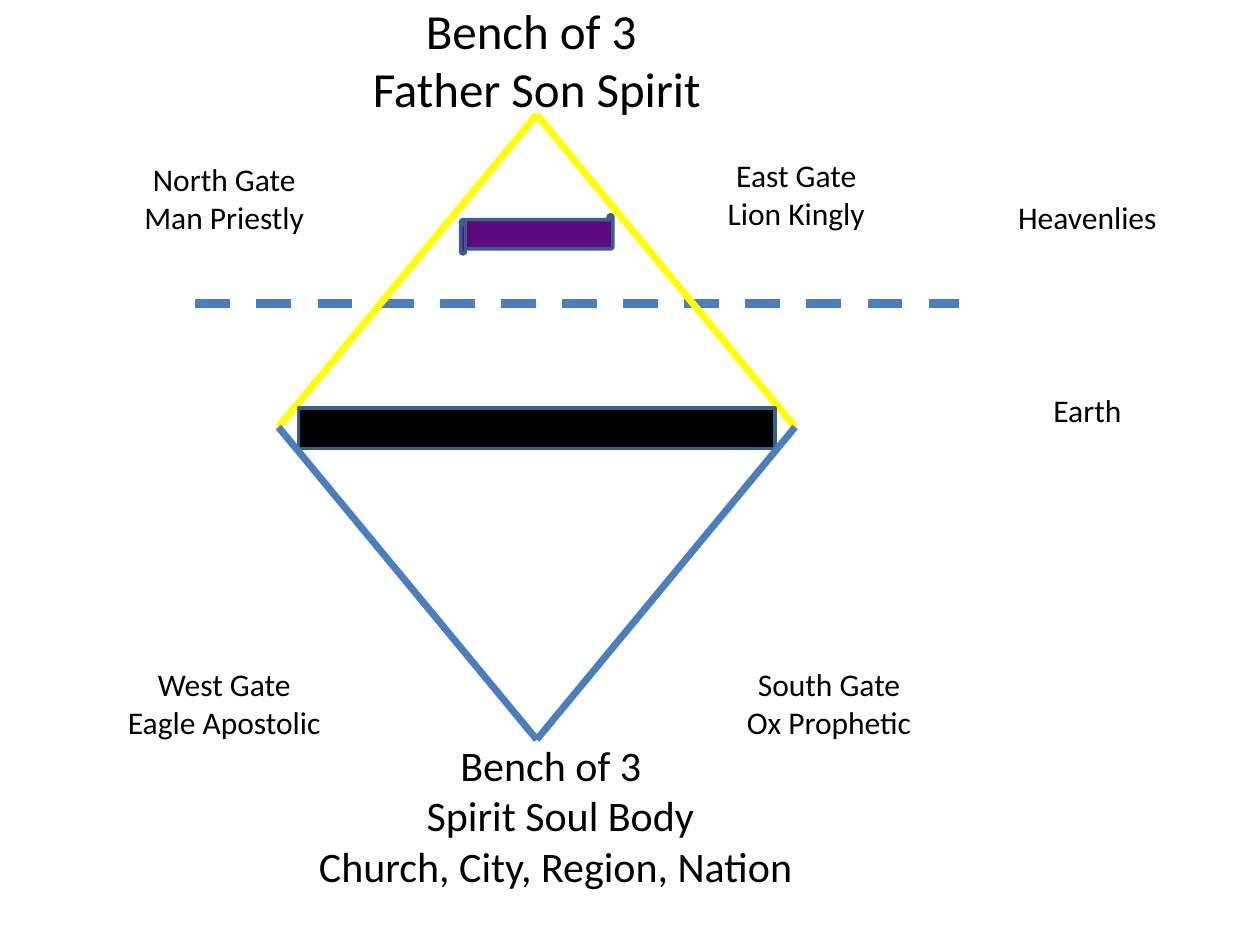
from lxml import etree
from pptx import Presentation
from pptx.dml.color import RGBColor
from pptx.enum.dml import MSO_LINE
from pptx.enum.shapes import MSO_CONNECTOR, MSO_SHAPE
from pptx.enum.text import MSO_ANCHOR, MSO_AUTO_SIZE, PP_ALIGN
from pptx.oxml.ns import qn
from pptx.util import Inches, Pt

STRAIGHT, DASH = MSO_CONNECTOR.STRAIGHT, MSO_LINE.DASH
RECT, SCROLL = MSO_SHAPE.RECTANGLE, MSO_SHAPE.HORIZONTAL_SCROLL
CENTER, TOP, NO_FIT = PP_ALIGN.CENTER, MSO_ANCHOR.TOP, MSO_AUTO_SIZE.NONE

THEME = {
    "font": "Calibri", "title": 28, "foot": 24, "label": 18,
    "text": "000000", "heaven": "FFFF00", "earth": "4B7EBC",
    "scroll": "5C097D", "bar": "000000", "outline": "3A5F8C",
}

TITLE = ["Bench of 3 ", "Father Son Spirit"]
FOOT = ["Bench of 3 ", " Spirit Soul Body", "Church, City, Region, Nation"]
LABELS = [
    ("Heavenlies", 7.76, 1.57),
    ("Earth", 7.76, 3.1),
    ("North Gate\vMan Priestly", 0.91, 1.27),
    ("East Gate\vLion Kingly", 5.45, 1.24),
    ("West Gate\vEagle Apostolic", 0.91, 5.28),
    ("South Gate\vOx Prophetic", 5.71, 5.28),
]

W, H = 10, 7.5
TITLE_W, TITLE_H = 3, 0.92
LABEL_W, LABEL_H = 1.74, 0.61
FOOT_W, FOOT_H = 2.6, 1.34
CX, CY = 4.26, 3.39
HALF_W, HALF_H = 2.05, 2.48
APEX, BASE = (CX, CY - HALF_H), (CX, CY + HALF_H)
SIDES = [(CX - HALF_W, CY), (CX + HALF_W, CY)]
HORIZON = [(1.55, 2.41), (7.61, 2.41)]


def rgb(key):
    return RGBColor.from_string(THEME[key])


def write(sp, paragraphs, size="label", color="text", wrap=False):
    tf = sp.text_frame
    tf.auto_size, tf.word_wrap, tf.vertical_anchor = NO_FIT, wrap, TOP
    tf.margin_left = tf.margin_right = tf.margin_top = tf.margin_bottom = 0
    tf.text = "\n".join(paragraphs)
    for p in tf.paragraphs:
        p.alignment, p.line_spacing = CENTER, 1.0
        p.space_before = p.space_after = Pt(0)
        for r in p.runs:
            r.font.name, r.font.size = THEME["font"], Pt(THEME[size])
            r.font.color.rgb = rgb(color)


def add_text(s, paragraphs, x, y, w=LABEL_W, h=LABEL_H, **fmt):
    sp = s.shapes.add_textbox(Inches(x), Inches(y), Inches(w), Inches(h))
    write(sp, paragraphs, **fmt)


def add_line(s, start, end, color, width=4, dash=None):
    ln = s.shapes.add_connector(STRAIGHT, *map(Inches, start + end))
    ln.line.color.rgb, ln.line.width = rgb(color), Pt(width)
    if dash:
        ln.line.dash_style = dash
    etree.SubElement(ln._element.spPr, qn("a:effectLst"))


def add_bar(s, kind, cy, w, h, fill):
    sp = s.shapes.add_shape(kind, Inches(CX - w / 2), Inches(cy - h / 2),
                            Inches(w), Inches(h))
    sp.shadow.inherit = False
    sp.fill.solid()
    sp.fill.fore_color.rgb = rgb(fill)
    sp.line.color.rgb, sp.line.width = rgb("outline"), Pt(2)


def main():
    prs = Presentation()
    prs.slide_width, prs.slide_height = Inches(W), Inches(H)
    s = prs.slides.add_slide(prs.slide_layouts[5])

    title = s.shapes.title
    title.left, title.top = Inches(CX - TITLE_W / 2), 0
    title.width, title.height = Inches(TITLE_W), Inches(TITLE_H)
    write(title, TITLE, size="title", wrap=True)

    add_bar(s, SCROLL, 1.86, 1.21, 0.31, "scroll")
    add_line(s, *HORIZON, "earth", width=5, dash=DASH)
    for side in SIDES:
        add_line(s, APEX, side, "heaven")
    add_bar(s, RECT, 3.4, 3.78, 0.32, "bar")
    for side in SIDES:
        add_line(s, side, BASE, "earth")

    add_text(s, FOOT, 3.11, BASE[1], FOOT_W, FOOT_H, size="foot")
    for text, x, y in LABELS:
        add_text(s, [text], x, y)

    prs.save("out.pptx")


if __name__ == "__main__":
    main()
